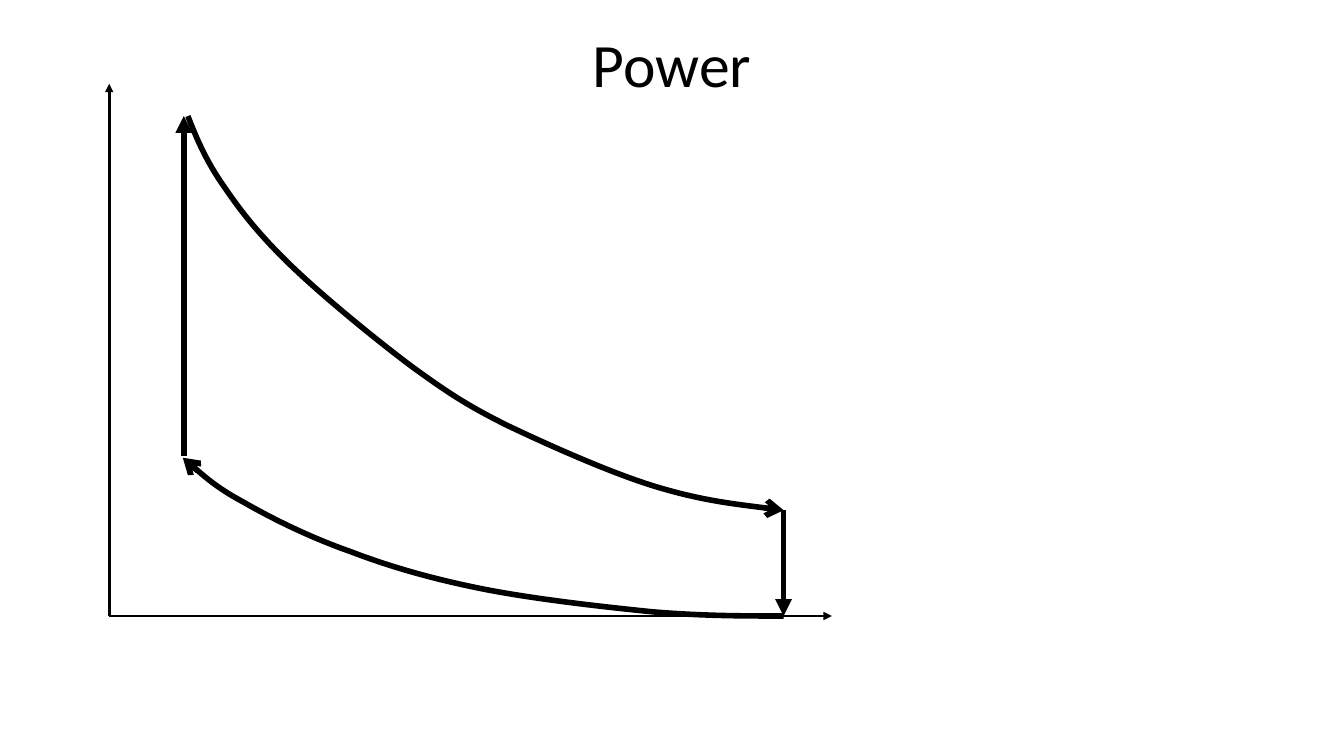
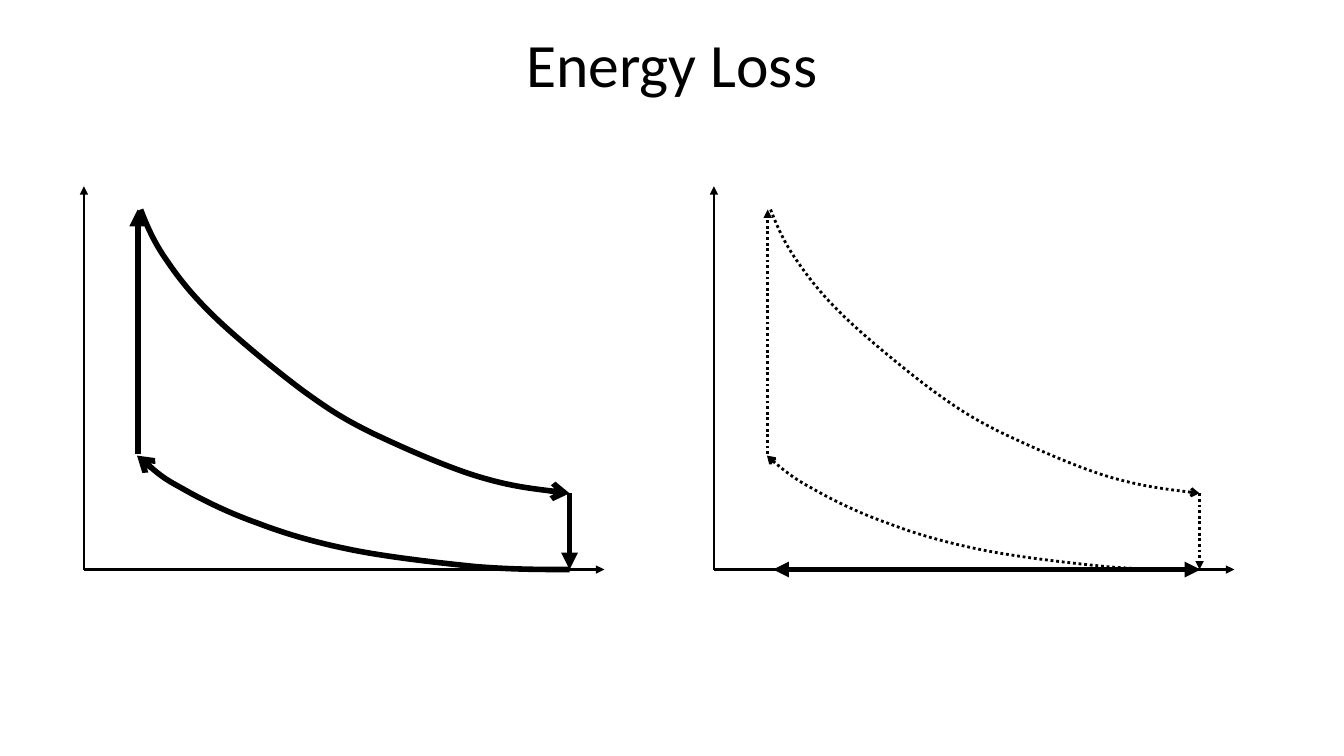
"""Build two slides of pressure-volume cycle diagrams."""
from lxml.etree import SubElement
from pptx import Presentation
from pptx.dml.color import RGBColor
from pptx.enum.dml import MSO_LINE
from pptx.enum.shapes import MSO_CONNECTOR
from pptx.enum.text import MSO_ANCHOR, PP_ALIGN
from pptx.oxml.ns import qn
from pptx.util import Pt

BLACK = "000000"
AXIS_WIDTH, AXIS_HEIGHT = 516.2, 380.2
AXIS_LINE, CYCLE_LINE, LOSS_LINE = 2, 4, 3.75
LEFT_VOLUME, RIGHT_VOLUME = 53.3, 481.7
HEATING = [(LEFT_VOLUME, 114.5), (LEFT_VOLUME, 357.1)]
COOLING = [(RIGHT_VOLUME, 75.6), (RIGHT_VOLUME, 0)]
EXPANSION = [
    (56.2, 357.1),
    (62.6, 340.6), (69.8, 324), (82.1, 306.7),
    (94.3, 288.7), (107.3, 272.2), (129.6, 250.6),
    (151.9, 229), (191.5, 196.6), (216.7, 177.8),
    (242.6, 159.1), (255.6, 150.5), (284.4, 136.1),
    (313.2, 122.4), (356.4, 103), (388.8, 92.9),
    (421.9, 82.8), (452.2, 79.2), (RIGHT_VOLUME, 75.6),
]
COMPRESSION = [
    (RIGHT_VOLUME, 0),
    (453.6, 0), (424.8, 0), (388.8, 2.9),
    (352.8, 6.5), (302.4, 12.2), (266.4, 19.4),
    (230.4, 26.6), (200.2, 35.3), (172.1, 46.1),
    (143.3, 56.2), (115.9, 69.8), (95.8, 81.4),
    (75.6, 92.2), (41.8, 121.7), (52.6, 113),
]
STROKES = [
    (EXPANSION, "cycle"),
    (COOLING, "cycle"),
    ([(0, 0), (0, AXIS_HEIGHT)], "axis"),
    ([(0, 0), (AXIS_WIDTH, 0)], "axis"),
    (HEATING, "cycle"),
    (COMPRESSION, "cycle"),
]
SOLID = {"axis": {"width": Pt(AXIS_LINE)}, "cycle": {"width": Pt(CYCLE_LINE)}}
DOTTED = {
    "axis": SOLID["axis"],
    "cycle": {"width": Pt(AXIS_LINE), "dash_style": MSO_LINE.ROUND_DOT},
}
SLIDES = [
    ("Power", [(78, 440, 1, SOLID)]),
    ("Energy Loss", [(60, 406.8, 0.72, SOLID), (510, 406.8, 0.72, DOTTED)]),
]


def color(hex_value):
    return RGBColor.from_string(hex_value)


def draw_stroke(shapes, points, line_format, ends):
    """Draw a straight line, or a Bézier curve when there are more than two points."""
    start, *rest = points
    curved = len(rest) > 1
    if curved:
        builder = shapes.build_freeform(*start)
        builder.add_line_segments(rest, close=False)
        shape = builder.convert_to_shape()
        shape.fill.background()
        segments = list(shape._element.iter(qn("a:lnTo")))
        for first in range(0, len(segments), 3):
            curve = SubElement(segments[first].getparent(), qn("a:cubicBezTo"))
            for segment in segments[first:first + 3]:
                curve.append(segment[0])
                segment.getparent().remove(segment)
    else:
        shape = shapes.add_connector(MSO_CONNECTOR.STRAIGHT, *start, *rest[0])
    shape.line.fill.solid()
    shape.line.fill.fore_color.rgb = color(BLACK)
    for name, value in line_format.items():
        setattr(shape.line, name, value)
    properties = shape._element.spPr
    for end in ends:
        arrow = SubElement(properties.find(qn("a:ln")), qn(f"a:{end}"))
        arrow.set("type", "arrow" if curved else "triangle")
    SubElement(properties, qn("a:effectLst"))


presentation = Presentation()
presentation.slide_width, presentation.slide_height = Pt(960), Pt(540)

for title, diagrams in SLIDES:
    slide = presentation.slides.add_slide(presentation.slide_layouts[6])
    title_box = slide.shapes.add_textbox(Pt(48), Pt(0), Pt(864), Pt(90))
    frame = title_box.text_frame
    for name, value in {"word_wrap": True, "vertical_anchor": MSO_ANCHOR.MIDDLE}.items():
        setattr(frame, name, value)
    paragraph = frame.paragraphs[0]
    paragraph.text = title
    paragraph.alignment = PP_ALIGN.CENTER
    run = paragraph.runs[0]
    for name, value in {"name": "Calibri", "size": Pt(44)}.items():
        setattr(run.font, name, value)
    run.font.color.rgb = color(BLACK)

    for left, base, scale, formats in diagrams:
        diagram = slide.shapes.add_group_shape().shapes
        for points, role in STROKES:
            placed = [(Pt(left + x * scale), Pt(base - y * scale)) for x, y in points]
            draw_stroke(diagram, placed, formats[role], ["tailEnd"])

loss_span = [(Pt(857.5), Pt(406.8)), (Pt(552.2), Pt(406.8))]
draw_stroke(slide.shapes, loss_span, {"width": Pt(LOSS_LINE)}, ["headEnd", "tailEnd"])

presentation.save("out.pptx")
